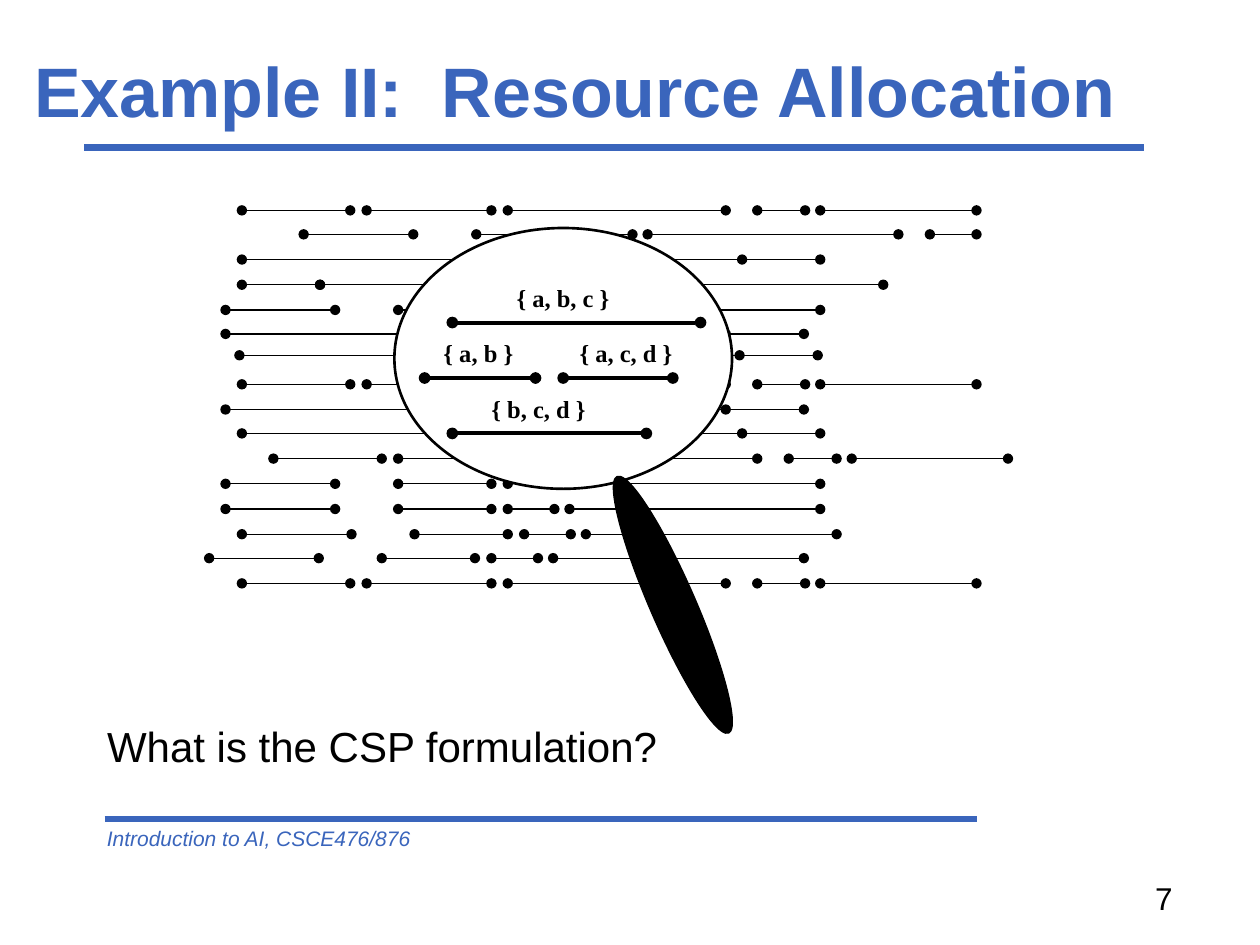
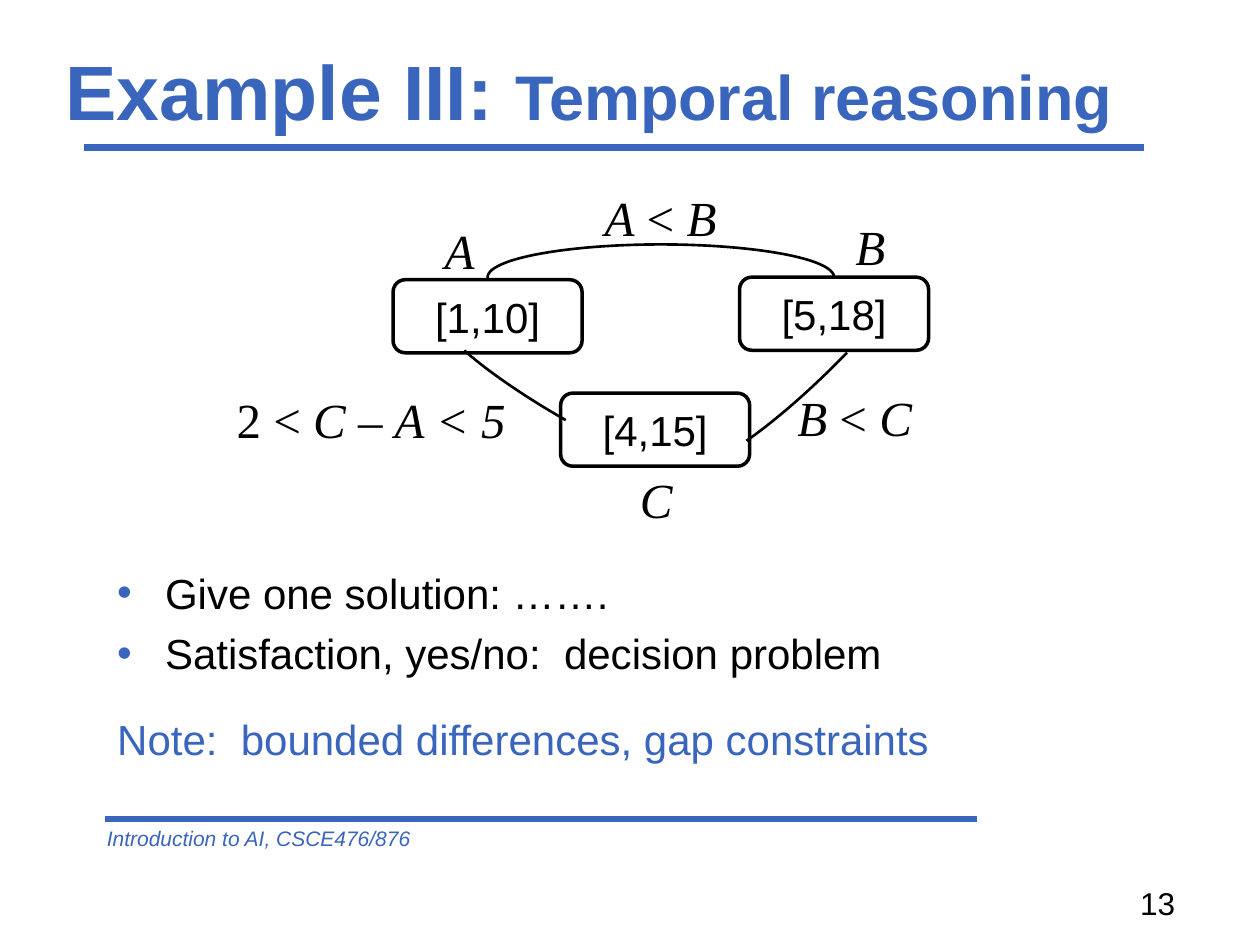
from lxml import etree
from pptx import Presentation
from pptx.dml.color import RGBColor
from pptx.enum import shapes, text
from pptx.oxml import ns
from pptx.util import Inches, Pt

BLUE = RGBColor(0x3A, 0x65, 0xBC)
BLACK = RGBColor(0, 0, 0)
WHITE = RGBColor(0xFF, 0xFF, 0xFF)
SANS, SERIF = "Arial", "Times New Roman"

# Start and end of the tasks in the row types that recur
FIVE_TASKS = [(1.92, 2.78), (2.91, 3.9), (4.03, 5.76), (6.01, 6.39), (6.51, 7.75)]
FOUR_TASKS = [(1.79, 2.66), (3.16, 3.9), (4.03, 4.4), (4.52, 6.51)]
OVERLAP = [(1.92, 5.89), (4.15, 6.51)]
CHAIN = [(1.92, 2.54), (2.54, 7.01)]
LAST_TASK = [(6.76, 7.13)]

# Height of the row, its tasks, shift to the right
TASK_ROWS = [
    (1.67, FIVE_TASKS, 0),
    (1.86, FOUR_TASKS + LAST_TASK, 0.62),
    (2.06, OVERLAP, 0),
    (2.26, CHAIN, 0),
    (2.46, FOUR_TASKS, 0),
    (2.65, OVERLAP, -0.13),
    (2.82, OVERLAP, -0.02),
    (3.05, FIVE_TASKS, 0),
    (3.25, OVERLAP, -0.13),
    (3.44, OVERLAP, 0),
    (3.64, FIVE_TASKS, 0.25),
    (3.84, FOUR_TASKS, 0),
    (4.04, FOUR_TASKS, 0),
    (4.24, FOUR_TASKS, 0.13),
    (4.43, FOUR_TASKS, -0.13),
    (4.63, FIVE_TASKS, 0),
]

# Tasks under the lens: start, end, height, label, label left
LENS_TASKS = [
    (3.59, 5.56, 2.56, "{ a, b, c }", 4.1),
    (3.37, 4.25, 3, "{ a, b }", 3.52),
    (4.47, 5.34, 3, "{ a, c, d }", 4.6),
    (3.59, 5.13, 3.44, "{ b, c, d }", 3.9),
]

INTERVALS = [(3.12, 2.22, "[1,10]"), (5.87, 2.2, "[5,18]"), (4.45, 3.12, "[4,15]")]

# Left, top, rotation, start angle, end angle
CONSTRAINT_ARCS = [
    (3.87, 1.94, 0, 179.78, 0),
    (3.3, 2.88, 209.2, 284.42, 350.7),
    (5.08, 2.44, 135, 245.44, 348.59),
]

UPRIGHT = {"italic": False}
GRAPH_LABELS = [
    (4.7, 1.44, 1.1, ["A", (" < ", UPRIGHT), "B"]),
    (6.23, 3.03, 1.12, ["B", (" < ", UPRIGHT), "C"]),
    (1.78, 3.04, 2.36, [("2 < ", UPRIGHT), "C ", ("– ", UPRIGHT), "A < 5"]),
    (3.43, 1.7, 0.44, "A"),
    (6.69, 1.67, 0.44, "B"),
    (4.98, 3.68, 0.44, "C"),
]


def box(left, top, width, height):
    return Inches(left), Inches(top), Inches(width), Inches(height)


def write(p, runs, size=24, name=SANS, color=BLACK, bold=False, italic=False,
          align=text.PP_ALIGN.LEFT, before=0):
    """Fill a paragraph; a run is a string or a (string, format changes) pair."""
    p.alignment = align
    p.space_before = Pt(before)
    base = {"size": size, "bold": bold, "italic": italic}
    for run in [runs] if isinstance(runs, str) else runs:
        words, changes = (run, {}) if isinstance(run, str) else run
        look = {**base, **changes}
        r = p.add_run()
        r.text = words
        r.font.name = name
        r.font.size = Pt(look["size"])
        r.font.bold = look["bold"]
        r.font.italic = look["italic"]
        r.font.color.rgb = color


def add_text(slide, place, runs, wrap=True, margin=0.1,
             anchor=text.MSO_ANCHOR.TOP, **look):
    tf = slide.shapes.add_textbox(*box(*place)).text_frame
    tf.word_wrap = wrap
    tf.margin_left = tf.margin_right = Inches(margin)
    tf.vertical_anchor = anchor
    write(tf.paragraphs[0], runs, **look)


def add_line(slide, start, end, color=BLACK, width=0.75, dots=False):
    line = slide.shapes.add_connector(
        shapes.MSO_CONNECTOR.STRAIGHT, *map(Inches, start + end))
    line.line.color.rgb = color
    line.line.width = Pt(width)
    if dots:
        ln = line.line._get_or_add_ln()
        for tag in ("a:headEnd", "a:tailEnd"):
            etree.SubElement(ln, ns.qn(tag), type="oval")
    etree.SubElement(line._element.spPr, ns.qn("a:effectLst"))


def add_outline(slide, kind, place, width, fill=None, rotation=0):
    sp = slide.shapes.add_shape(kind, *box(*place))
    sp.shadow.inherit = False
    sp.rotation = rotation
    sp.line.color.rgb = BLACK
    sp.line.width = Pt(width)
    if fill is None:
        sp.fill.background()
    else:
        sp.fill.solid()
        sp.fill.fore_color.rgb = fill
    return sp


def place_frame(placeholder, place):
    placeholder.left, placeholder.top, placeholder.width, placeholder.height = box(*place)
    tf = placeholder.text_frame
    tf.auto_size = text.MSO_AUTO_SIZE.NONE
    return tf


def set_bullet(p, bullet=True):
    pPr = p._p.get_or_add_pPr()
    indent = Inches(0.38) if bullet else 0
    pPr.set("marL", str(indent))
    pPr.set("indent", str(-indent))
    if bullet:
        color = etree.SubElement(pPr, ns.qn("a:buClr"))
        etree.SubElement(color, ns.qn("a:srgbClr"), val=str(BLUE))
        etree.SubElement(pPr, ns.qn("a:buFont"), typeface=SANS)
        etree.SubElement(pPr, ns.qn("a:buChar"), char="•")
    else:
        etree.SubElement(pPr, ns.qn("a:buNone"))


def add_slide(prs, title, title_place, number, number_place):
    """Add a slide with its title, the two rules, the footer and the number."""
    slide = prs.slides.add_slide(prs.slide_layouts[1])
    add_line(slide, (0.67, 1.17), (9.08, 1.17), BLUE, 4)
    add_line(slide, (0.83, 6.5), (7.75, 6.5), BLUE, 4)
    add_text(slide, (0.75, 6.5, 5.25, 0.3), "Introduction to AI, CSCE476/876",
             size=12, color=BLUE, italic=True)
    tf = place_frame(slide.shapes.title, title_place)
    tf.vertical_anchor = text.MSO_ANCHOR.MIDDLE
    write(tf.paragraphs[0], title, size=40, color=BLUE, bold=True)
    add_text(slide, number_place, number, size=18)
    return slide


def add_body(slide, place, items):
    """Fill the body with (text, has bullet, colour, space before) items."""
    tf = place_frame(slide.placeholders[1], place)
    for i, (words, bullet, color, before) in enumerate(items):
        p = tf.add_paragraph() if i else tf.paragraphs[0]
        set_bullet(p, bullet)
        write(p, words, color=color, before=before)


def add_interval(slide, left, top, label):
    sp = add_outline(slide, shapes.MSO_SHAPE.ROUNDED_RECTANGLE, (left, top, 1.5, 0.58), 2)
    tf = sp.text_frame
    tf.vertical_anchor = text.MSO_ANCHOR.MIDDLE
    write(tf.paragraphs[0], label, align=text.PP_ALIGN.CENTER)


def add_arc(slide, left, top, rotation, *angles):
    arc = add_outline(slide, shapes.MSO_SHAPE.ARC, (left, top, 2.75, 0.52), 1.5,
                      rotation=rotation)
    for i, degrees in enumerate(angles):
        arc.adjustments[i] = degrees * 0.6  # 60000 units a degree, scaled by 100000


def build_resource_allocation(prs):
    slide = add_slide(prs, "Example II:  Resource Allocation", (0.17, 0.25, 9.83, 0.92),
                      "7", (9.07, 6.93, 0.84, 0.4))
    add_body(slide, (0.75, 5.67, 8.5, 0.6),
             [("What is the CSP formulation?", False, BLACK, 0)])
    for y, tasks, shift in TASK_ROWS:
        for start, end in tasks:
            add_line(slide, (start + shift, y), (end + shift, y), dots=True)
    oval = shapes.MSO_SHAPE.OVAL
    add_outline(slide, oval, (3.13, 1.81, 2.68, 2.07), 1.5, WHITE)
    for start, end, y, label, left in LENS_TASKS:
        add_line(slide, (start, y), (end, y), width=2.25, dots=True)
        add_text(slide, (left, y - 0.35, 0.9, 0.3), label, wrap=False, margin=0,
                 anchor=text.MSO_ANCHOR.MIDDLE, size=14, name=SERIF, bold=True)
    add_outline(slide, oval, (4.23, 4.62, 2.22, 0.36), 0.75, BLACK, 66.5)


def build_temporal_reasoning(prs):
    title = [("Example III: ", {"size": 44}), ("Temporal reasoning", {"size": 36})]
    slide = add_slide(prs, title, (0.42, 0.25, 9.25, 0.92),
                      "13", (8.95, 6.97, 0.84, 0.4))
    add_body(slide, (0.83, 4.45, 8.5, 1.9), [
        ("Give one solution: …….", True, BLACK, 0),
        ("Satisfaction, yes/no:  decision problem", True, BLACK, 6),
        ("Note:  bounded differences, gap constraints", False, BLUE, 20),
    ])
    for interval in INTERVALS:
        add_interval(slide, *interval)
    for arc in CONSTRAINT_ARCS:
        add_arc(slide, *arc)
    for left, top, width, runs in GRAPH_LABELS:
        add_text(slide, (left, top, width, 0.57), runs, wrap=False,
                 size=28, name=SERIF, italic=True)


def main():
    prs = Presentation()
    prs.slide_width, prs.slide_height = Inches(10), Inches(7.5)
    build_resource_allocation(prs)
    build_temporal_reasoning(prs)
    prs.save("out.pptx")


if __name__ == "__main__":
    main()
